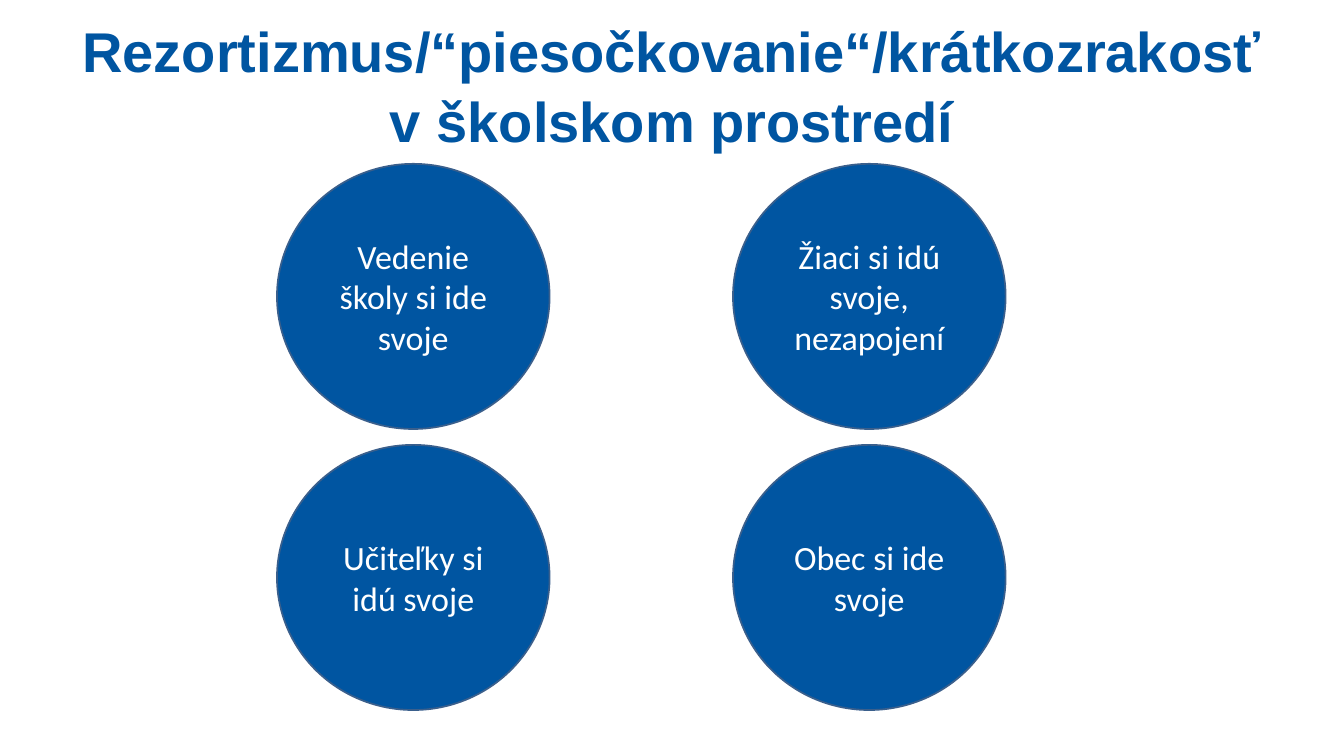
"""Build the slide on four groups that each go their own way at school."""
from pptx import Presentation
from pptx import util as u
from pptx.dml.color import RGBColor
from pptx.enum import shapes, text


def add_run(p, words, font, size, color, bold=False):
    r = p.add_run()
    r.text = words
    r.font.name = font
    r.font.size = u.Pt(size)
    r.font.bold = bold
    r.font.color.rgb = rgb(color)


def rgb(color):
    return RGBColor.from_string(color)


BLUE, OUTLINE, WHITE = "0055A1", "3A5F8C", "FFFFFF"
GROUPS = [
    ["Vedenie školy si ide svoje", "Žiaci si idú svoje, nezapojení"],
    ["Učiteľky si idú svoje", "Obec si ide svoje"],
]

prs = Presentation()
prs.slide_width, prs.slide_height = u.Cm(55.85), u.Cm(31.42)
s = prs.slides.add_slide(prs.slide_layouts[5])

title = s.shapes.title
title.left, title.top = u.Cm(3.15), u.Cm(0.53)
title.width, title.height = u.Cm(49.53), u.Cm(5.64)
tf = title.text_frame
tf.margin_left = tf.margin_top = tf.margin_right = tf.margin_bottom = 0
tf.word_wrap = True
tf.auto_size = text.MSO_AUTO_SIZE.NONE
tf.vertical_anchor = text.MSO_ANCHOR.TOP
p = tf.paragraphs[0]
p.alignment = text.PP_ALIGN.CENTER
p.line_spacing = 1.05
add_run(p, "Rezortizmus/“piesočkovanie“/krátkozrakosť", "Arial", 66, BLUE, True)
p.add_line_break()
add_run(p, "v školskom prostredí", "Arial", 66, BLUE, True)

for row, groups in enumerate(GROUPS):
    for col, words in enumerate(groups):
        sp = s.shapes.add_shape(
            shapes.MSO_SHAPE.OVAL,
            u.Cm(11.51 + 18.95 * col), u.Cm(6.81 + 11.68 * row),
            u.Cm(11.33), u.Cm(11.02))
        sp.shadow.inherit = False
        sp.fill.solid()
        sp.fill.fore_color.rgb = rgb(BLUE)
        sp.line.color.rgb = rgb(OUTLINE)
        sp.line.width = u.Pt(2)
        tf = sp.text_frame
        tf.word_wrap = True
        tf.vertical_anchor = text.MSO_ANCHOR.MIDDLE
        p = tf.paragraphs[0]
        p.alignment = text.PP_ALIGN.CENTER
        add_run(p, words, "Calibri", 40, WHITE)

prs.save("out.pptx")
